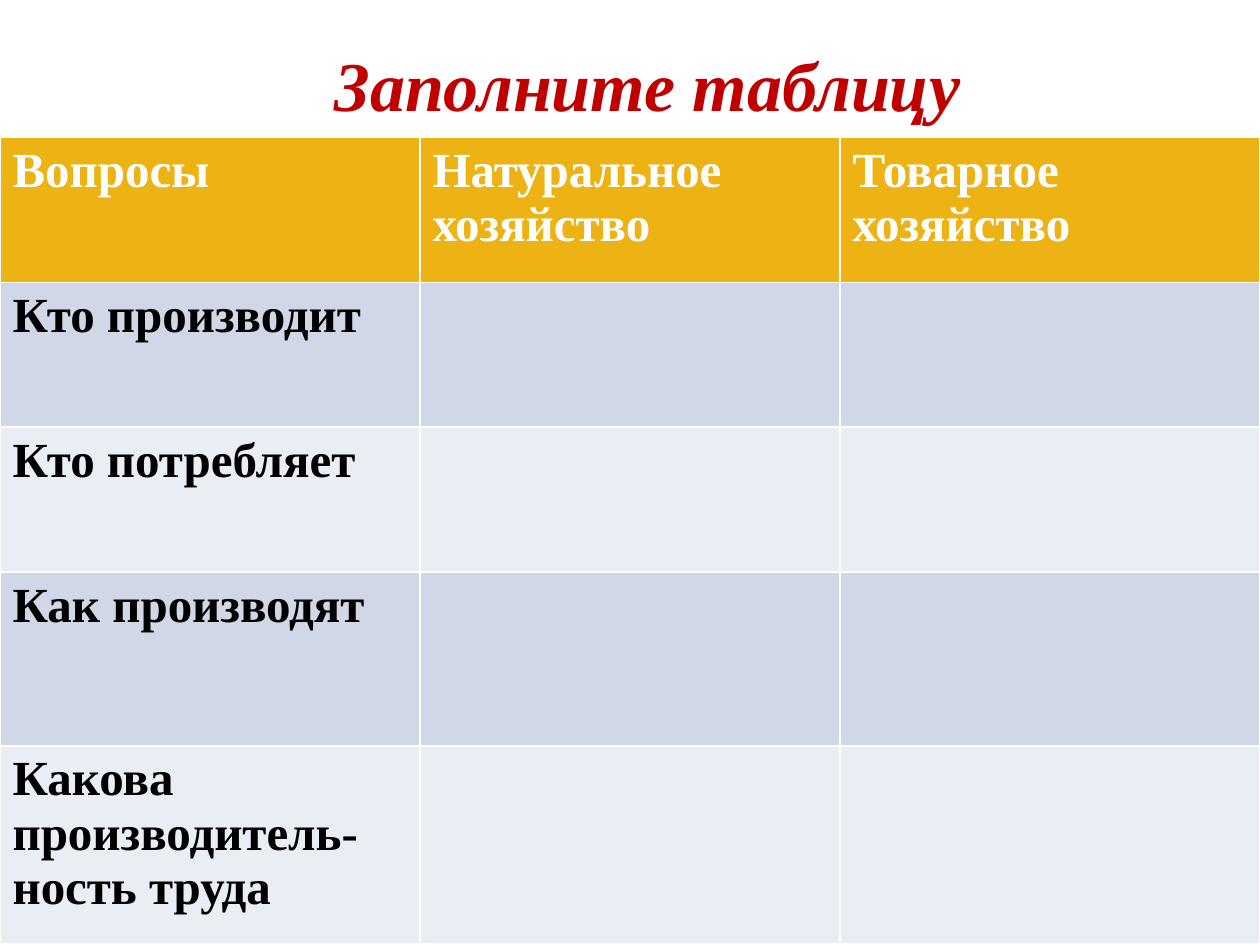
from pptx import Presentation
from pptx.dml.color import RGBColor
from pptx.enum.text import MSO_ANCHOR, PP_ALIGN
from pptx.util import Inches, Pt


def style(para, size, color):
    """Set the bold serif face shared by the title and the table."""
    for run in para.runs:
        font = run.font
        font.name = "Times New Roman"
        font.size = Pt(size)
        font.bold = True
        font.color.rgb = RGBColor.from_string(color)


deck = Presentation()
deck.slide_width, deck.slide_height = Inches(10), Inches(7.5)
slide = deck.slides.add_slide(deck.slide_layouts[5])

title = slide.shapes.title
title.left, title.top = Inches(0.64), Inches(0.26)
title.width, title.height = Inches(9), Inches(0.8)
frame = title.text_frame
frame.text = "Заполните таблицу"
frame.vertical_anchor = MSO_ANCHOR.MIDDLE
head = frame.paragraphs[0]
head.alignment = PP_ALIGN.CENTER
style(head, 40, "C00000")
head.runs[0].font.italic = True

rows = [
    ["Вопросы", "Натуральное хозяйство", "Товарное хозяйство"],
    ["Кто производит", "", ""],
    ["Кто потребляет", "", ""],
    ["Как производят", "", ""],
    ["Какова производитель-ность труда", "", ""],
]
heights = [1.15, 1.15, 1.15, 1.38, 1.57]
bands = ["E9EDF4", "D0D8E8"]

# The default table style supplies the white rules between cells.
table = slide.shapes.add_table(
    len(rows), 3, Inches(0), Inches(1.09), Inches(10), Inches(sum(heights))
).table
for r, (texts, height) in enumerate(zip(rows, heights)):
    table.rows[r].height = Inches(height)
    fill = bands[r % 2] if r else "EDB214"
    ink = "000000" if r else "FFFFFF"
    for c, text in enumerate(texts):
        cell = table.cell(r, c)
        cell.fill.solid()
        cell.fill.fore_color.rgb = RGBColor.from_string(fill)
        if text:
            cell.text_frame.text = text
            style(cell.text_frame.paragraphs[0], 28, ink)

deck.save("out.pptx")
